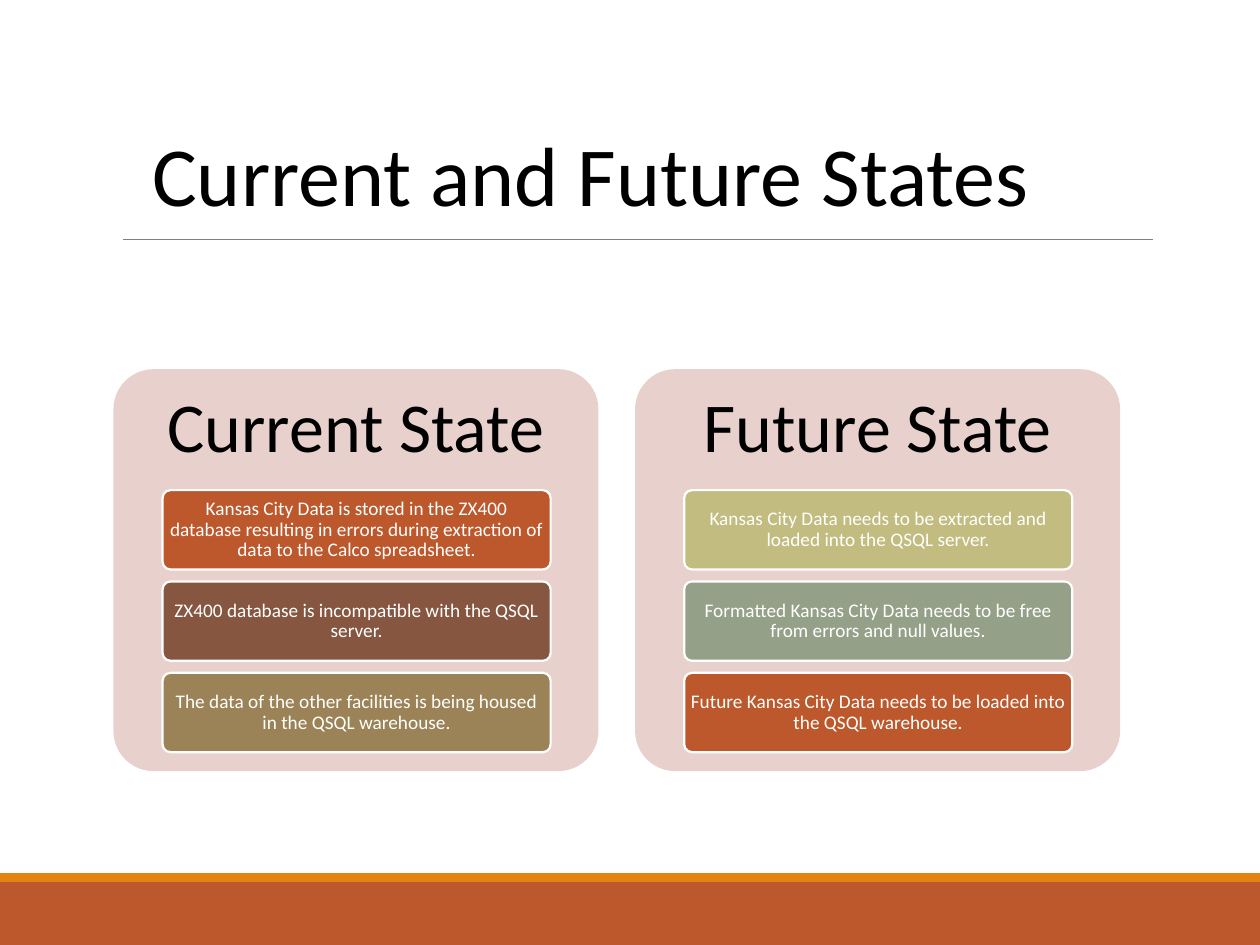
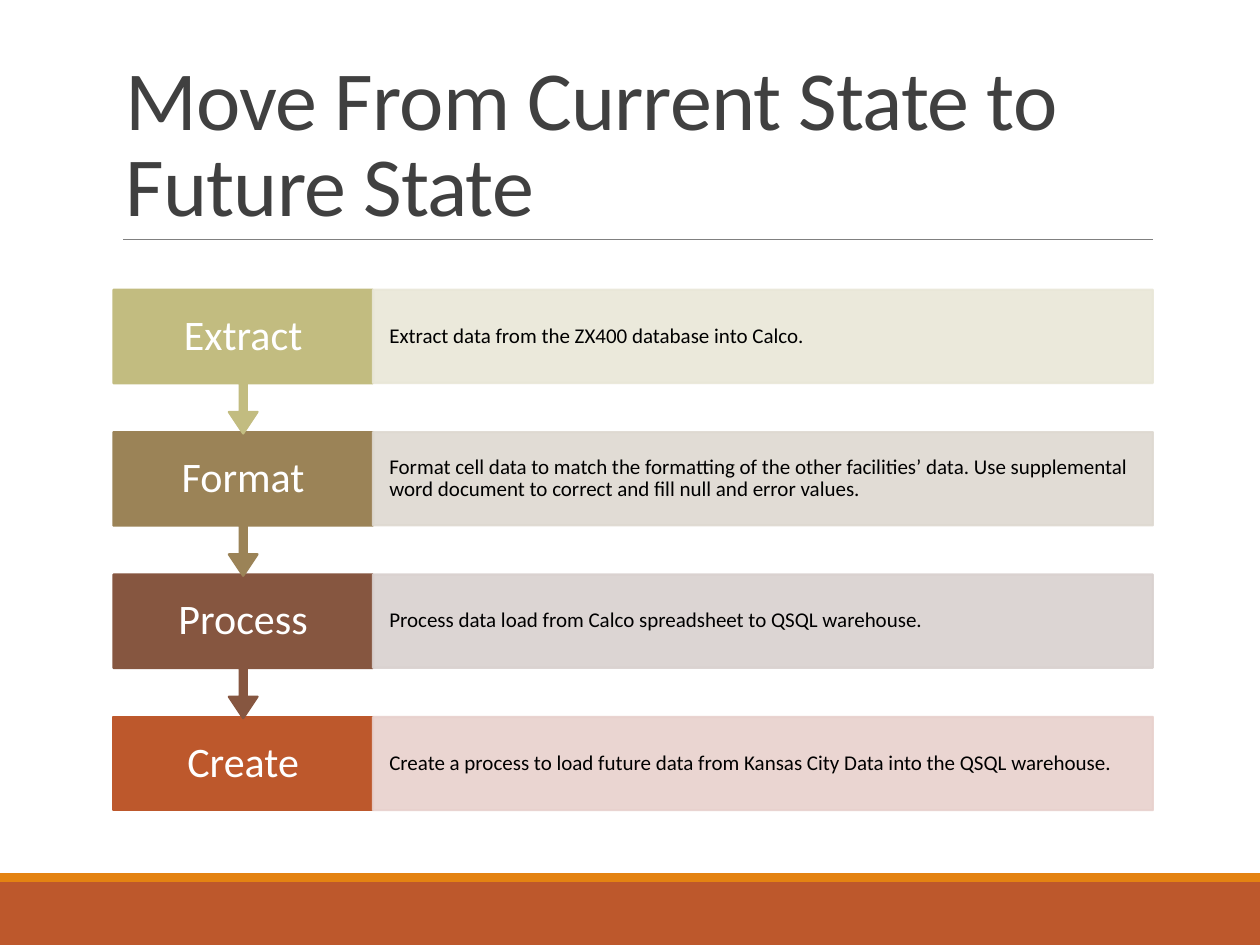
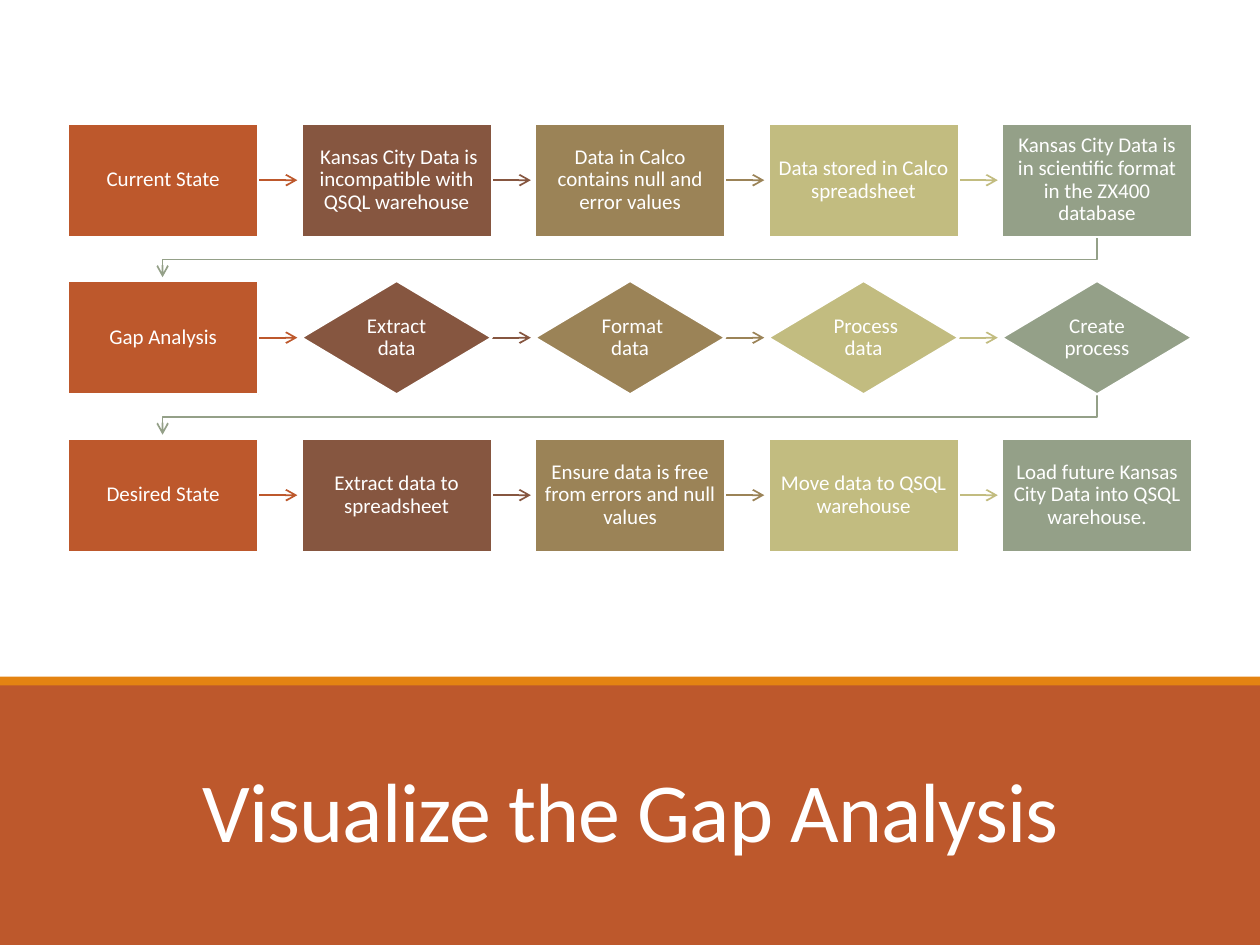
from lxml import etree
from pptx import Presentation
from pptx.dml.color import RGBColor
from pptx.enum import shapes as sh, text as tx
from pptx.oxml.ns import qn
from pptx.util import Inches, Pt

RUST, BROWN, TAN, OLIVE, SAGE = "BD582C", "865640", "9B8357", "C2BC80", "94A088"
ORANGE, BLUSH, WHITE, BLACK = "E48312", "E8D1CD", "FFFFFF", "000000"
KIND = sh.MSO_SHAPE
CENTER, LEFT = tx.PP_ALIGN.CENTER, tx.PP_ALIGN.LEFT
MIDDLE, BOTTOM = tx.MSO_ANCHOR.MIDDLE, tx.MSO_ANCHOR.BOTTOM


def add_block(slide, kind, at, fill, edge=None, opacity=100):
    """Add a filled preset shape, with a 1.25 pt edge if a colour is given."""
    block = slide.shapes.add_shape(kind, *map(Inches, at))
    block.shadow.inherit = False
    block.fill.solid()
    block.fill.fore_color.rgb = RGBColor.from_string(fill)
    if edge:
        block.line.color.rgb = RGBColor.from_string(edge)
        block.line.width = Pt(1.25)
    else:
        block.line.fill.background()
    if opacity < 100:
        for colour in block._element.spPr.iter(qn("a:srgbClr")):
            etree.SubElement(colour, qn("a:alpha"), val=str(opacity * 1000))
    return block


def write(shape, words, size, colour, align=CENTER, anchor=MIDDLE,
          inset=(0.1, 0.05), spacing=0.9, wrap=True):
    """Put one paragraph in a shape; inset is (sides, top and bottom)."""
    frame = shape.text_frame
    frame.word_wrap = wrap
    frame.vertical_anchor = anchor
    frame.margin_left = frame.margin_right = Inches(inset[0])
    frame.margin_top = frame.margin_bottom = Inches(inset[1])
    paragraph = frame.paragraphs[0]
    paragraph.alignment = align
    paragraph.line_spacing = spacing
    run = paragraph.add_run()
    run.text = words
    run.font.name = "Calibri"
    run.font.size = Pt(size)
    run.font.color.rgb = RGBColor.from_string(colour)
    return run


prs = Presentation()
prs.slide_width, prs.slide_height = Inches(10), Inches(7.5)
states, steps, gap = [prs.slides.add_slide(prs.slide_layouts[6]) for _ in range(3)]
strokes = []  # (line, colour, width in points, has arrowhead)

# Shared bands and title rule
for slide, band_top, accent_top in ((states, 7, 6.93), (steps, 7, 6.93), (gap, 5.42, 5.37)):
    add_block(slide, KIND.RECTANGLE, (0, band_top, 10, 7.5 - band_top), RUST)
    add_block(slide, KIND.RECTANGLE, (0, accent_top, 10, 0.07), ORANGE)
for slide in (states, steps):
    rule = slide.shapes.add_connector(
        sh.MSO_CONNECTOR.STRAIGHT, Inches(0.98), Inches(1.9), Inches(9.15), Inches(1.9))
    strokes.append((rule, "808080", 0.5, False))

# Titles
title = states.shapes.add_textbox(Inches(1.11), Inches(0.92), Inches(7.24), Inches(0.91))
write(title, "Current and Future States", 48, BLACK, LEFT, tx.MSO_ANCHOR.TOP,
      spacing=1.0, wrap=False)
for slide, at, words, colour, align in (
    (steps, (0.9, 0.31, 8.25, 1.59), "Move From Current State to Future State", "404040", LEFT),
    (gap, (0.88, 5.74, 8.25, 1.13), "Visualize the Gap Analysis", WHITE, CENTER),
):
    title = slide.shapes.add_textbox(*map(Inches, at))
    run = write(title, words, 48, colour, align, BOTTOM, spacing=0.85)
    run._r.get_or_add_rPr().set("spc", "-50")

# Slide 1: two panels with three cards each
panels = [
    ("Current State", [
        (RUST, "Kansas City Data is stored in the ZX400 database resulting in errors "
               "during extraction of data to the Calco spreadsheet."),
        (BROWN, "ZX400 database is incompatible with the QSQL server."),
        (TAN, "The data of the other facilities is being housed in the QSQL warehouse."),
    ]),
    ("Future State", [
        (OLIVE, "Kansas City Data needs to be extracted and loaded into the QSQL server."),
        (SAGE, "Formatted Kansas City Data needs to be free from errors and null values."),
        (RUST, "Future Kansas City Data needs to be loaded into the QSQL warehouse."),
    ]),
]
for column, (state, cards) in enumerate(panels):
    left = 0.9 + 4.14 * column
    panel = add_block(states, KIND.ROUNDED_RECTANGLE, (left, 2.93, 3.85, 3.19), BLUSH)
    panel.adjustments[0] = 0.1
    heading = states.shapes.add_textbox(Inches(left), Inches(2.93), Inches(3.85), Inches(0.96))
    write(heading, state, 40, BLACK, inset=(0.17, 0.17))
    for row, (colour, words) in enumerate(cards):
        card = add_block(states, KIND.ROUNDED_RECTANGLE,
                         (left + 0.39, 3.89 + 0.725 * row, 3.08, 0.63), colour, WHITE)
        card.adjustments[0] = 0.1
        write(card, words, 11, WHITE, inset=(0.03, 0.02))

# Slide 2: four steps, the lowest at the back so that each arrow overlaps the next step
process = [
    ("Extract", OLIVE, "E9E7D8", "Extract data from the ZX400 database into Calco."),
    ("Format", TAN, "DED9D1", "Format cell data to match the formatting of the other facilities’ "
     "data. Use supplemental word document to correct and fill null and error values."),
    ("Process", BROWN, "D9D1CF", "Process data load from Calco spreadsheet to QSQL warehouse."),
    ("Create", RUST, BLUSH, "Create a process to load future data from Kansas City Data into "
     "the QSQL warehouse."),
]
for row, (step, colour, tint, words) in reversed(list(enumerate(process))):
    top = 2.3 + 1.13 * row
    if row == len(process) - 1:
        add_block(steps, KIND.RECTANGLE, (0.9, top, 2.06, 0.74), colour, colour)
    else:
        callout = add_block(steps, KIND.UP_ARROW_CALLOUT, (0.9, top, 2.06, 1.14), colour, colour)
        callout.rotation = 180
        for index, value in enumerate((0.05, 0.1, 0.15, 0.65)):
            callout.adjustments[index] = value
    name = steps.shapes.add_textbox(Inches(0.9), Inches(top), Inches(2.06), Inches(0.74))
    write(name, step, 24, WHITE, inset=(0.15, 0.19))
    detail = add_block(steps, KIND.RECTANGLE, (2.96, top, 6.19, 0.74), tint, tint, opacity=90)
    write(detail, words, 12, BLACK, LEFT, inset=(0.13, 0.17))

# Slide 3: flow of three rows, read left to right
flow = [
    ["Current State", " Kansas City Data is incompatible with QSQL warehouse",
     "Data in Calco contains null and error values", "Data stored in Calco spreadsheet",
     "Kansas City Data is in scientific format in the ZX400 database"],
    ["Gap Analysis", "Extract data", " Format data", " Process data", "Create process"],
    ["Desired State", "Extract data to spreadsheet",
     "Ensure data is free from errors and null values", "Move data to QSQL warehouse",
     "Load future Kansas City Data into QSQL warehouse."],
]
column_colours = [RUST, BROWN, TAN, OLIVE, SAGE]
width, height = 1.51, 0.9
for row, stages in enumerate(flow):
    top = 0.98 + 1.25 * row
    for column, (words, colour) in enumerate(zip(stages, column_colours)):
        left = 0.54 + 1.853 * column
        if column < len(stages) - 1:
            y = Inches(top + height / 2)
            arrow = gap.shapes.add_connector(
                sh.MSO_CONNECTOR.STRAIGHT, Inches(left + width), y, Inches(left + width + 0.31), y)
            strokes.append((arrow, colour, 1, True))
        elif row < len(flow) - 1:
            start_x, end_x = Inches(left + width / 2), Inches(1.29)
            bottom, turn, tip = [Inches(top + height + drop) for drop in (0, 0.18, 0.32)]
            outline = gap.shapes.build_freeform(start_x, bottom)
            outline.add_line_segments([(start_x, turn), (end_x, turn), (end_x, tip)], close=False)
            wrap_arrow = outline.convert_to_shape()
            wrap_arrow.fill.background()
            strokes.append((wrap_arrow, colour, 1, True))
        kind = KIND.FLOWCHART_DECISION if row == 1 and column else KIND.RECTANGLE
        stage = add_block(gap, kind, (left, top, width, height), colour, WHITE)
        write(stage, words, 12, WHITE, inset=(0.07, 0.08))

for stroke, colour, points, has_head in strokes:
    stroke.line.color.rgb = RGBColor.from_string(colour)
    stroke.line.width = Pt(points)
    properties = stroke._element.spPr
    if has_head:
        etree.SubElement(properties.find(qn("a:ln")), qn("a:tailEnd"), type="arrow")
    etree.SubElement(properties, qn("a:effectLst"))

prs.save("out.pptx")
